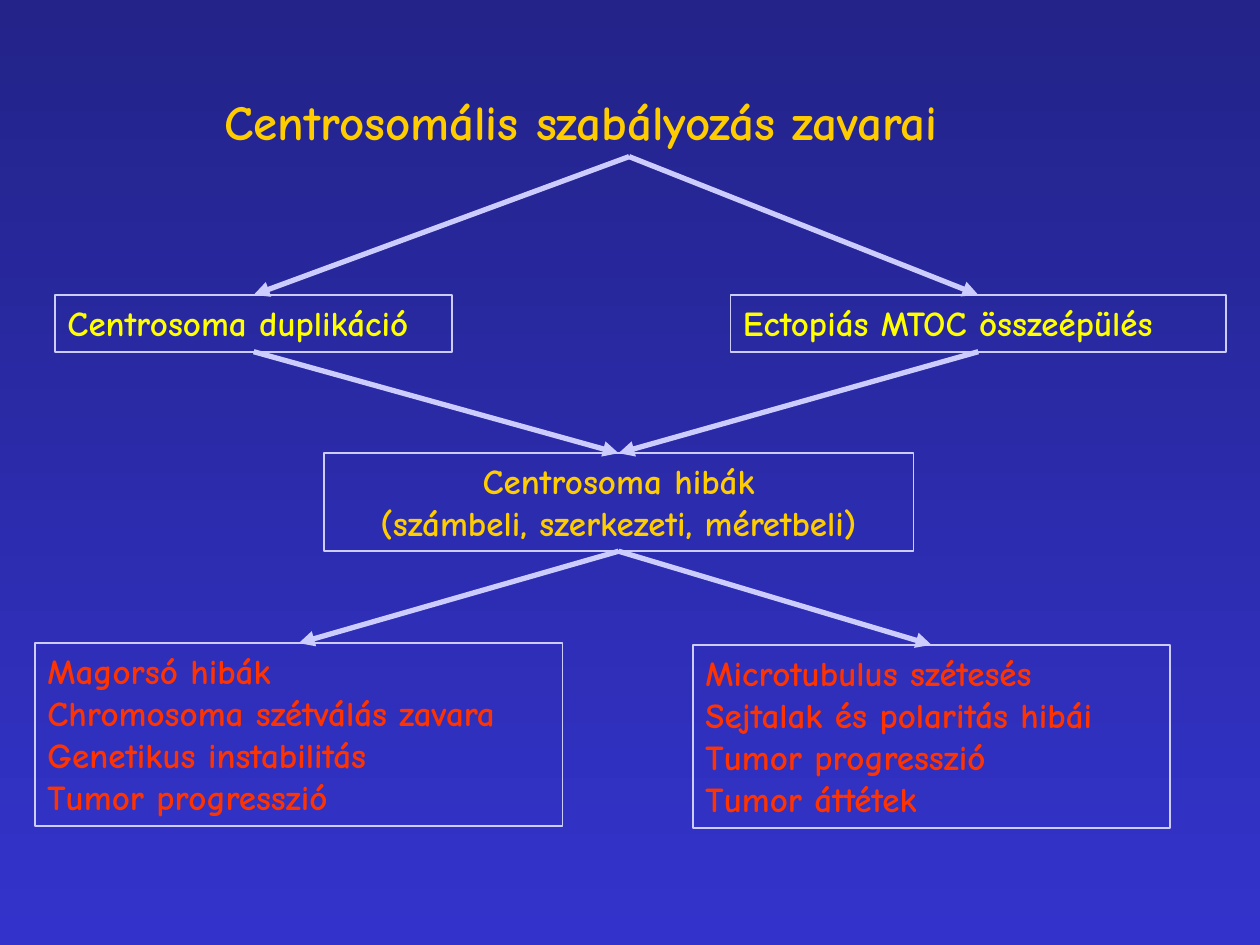
import pptx
import pptx.dml.color
import pptx.enum.shapes
import pptx.enum.text
import pptx.oxml
import pptx.oxml.ns
import pptx.util

Pt = pptx.util.Pt
ALIGN = pptx.enum.text.PP_ALIGN
FONT = "Comic Neue"
TOP, BOTTOM = 0, 2
COLORS = {
    "background_top": "232389",
    "background_bottom": "3333CC",
    "line": "CCCCFF",
    "gold": "FFCC00",
    "yellow": "FFFF00",
    "red": "FF3300",
}


def color(name):
    """Return the named palette colour."""
    return pptx.dml.color.RGBColor.from_string(COLORS[name])


def paint_background(slide):
    """Fill the slide with a gradient running downwards."""
    fill = slide.background.fill
    fill.gradient()
    fill.gradient_angle = 270
    for stop, name in zip(fill.gradient_stops, ("background_top", "background_bottom")):
        stop.color.rgb = color(name)


def write_text(shape, lines, size, color_name, alignment=ALIGN.LEFT):
    """Write one bold paragraph per line into the shape."""
    frame = shape.text_frame
    frame.word_wrap = True
    frame.vertical_anchor = pptx.enum.text.MSO_ANCHOR.TOP
    frame.text = "\n".join(lines)
    for paragraph in frame.paragraphs:
        paragraph.alignment = alignment
        for run in paragraph.runs:
            run.font.name = FONT
            run.font.size = Pt(size)
            run.font.bold = True
            run.font.color.rgb = color(color_name)


def add_title(slide, box, text):
    """Add the slide title as a text box."""
    shape = slide.shapes.add_textbox(*map(Pt, box))
    write_text(shape, [text], 28, "gold")
    return shape


def add_box(slide, box, lines, color_name, alignment=ALIGN.LEFT):
    """Add an outlined, unfilled box of text."""
    kind = pptx.enum.shapes.MSO_SHAPE.RECTANGLE
    shape = slide.shapes.add_shape(kind, *map(Pt, box))
    shape.shadow.inherit = False
    shape.fill.background()
    shape.line.color.rgb = color("line")
    shape.line.width = Pt(1)
    write_text(shape, lines, 20, color_name, alignment)
    return shape


def add_arrow(slide, source, target):
    """Join the bottom of one shape to the top of another with an arrow."""
    kind = pptx.enum.shapes.MSO_CONNECTOR.STRAIGHT
    arrow = slide.shapes.add_connector(kind, 0, 0, 0, 0)
    arrow.begin_connect(source, BOTTOM)
    arrow.end_connect(target, TOP)
    arrow.line.color.rgb = color("line")
    arrow.line.width = Pt(3)
    qualified = pptx.oxml.ns.qn
    line = arrow.line._get_or_add_ln()
    line.append(line.makeelement(qualified("a:tailEnd"), {"type": "triangle"}))
    properties = arrow._element.spPr
    properties.append(properties.makeelement(qualified("a:effectLst"), {}))


def add_diagram(slide, box):
    """Lay out the title, the boxes and the arrows between them."""
    left, top, width, height = box

    def place(x, y, box_width, box_height):
        return left + x, top + y, box_width, box_height

    title = add_title(slide, place(121, 49, 477, 40.5), "Centrosomális szabályozás zavarai")
    duplication = add_box(
        slide, place(31.5, 168.5, 227, 32.5), ["Centrosoma duplikáció"], "yellow")
    assembly = add_box(
        slide, place(417.5, 168.5, 283, 32.5), ["Ectopiás MTOC összeépülés"], "yellow")
    defects = add_box(
        slide, place(185, 259, 337, 56),
        ["Centrosoma hibák", "(számbeli, szerkezeti, méretbeli)"], "gold", ALIGN.CENTER)
    spindle = add_box(
        slide, place(20, 367.5, 301.5, 104.5),
        ["Magorsó hibák", "Chromosoma szétválás zavara",
         "Genetikus instabilitás", "Tumor progresszió"], "red")
    microtubule = add_box(
        slide, place(396, 368.5, 272.5, 104.5),
        ["Microtubulus szétesés", "Sejtalak és polaritás hibái",
         "Tumor progresszió", "Tumor áttétek"], "red")

    for cause in (duplication, assembly):
        add_arrow(slide, title, cause)
        add_arrow(slide, cause, defects)
    for outcome in (spindle, microtubule):
        add_arrow(slide, defects, outcome)


def main():
    """Build and save the presentation."""
    presentation = pptx.Presentation()
    presentation.slide_width, presentation.slide_height = Pt(720), Pt(540)
    slide = presentation.slides.add_slide(presentation.slide_layouts[6])
    paint_background(slide)
    add_diagram(slide, (0, 0, 720, 540))
    presentation.save("out.pptx")


if __name__ == "__main__":
    main()
